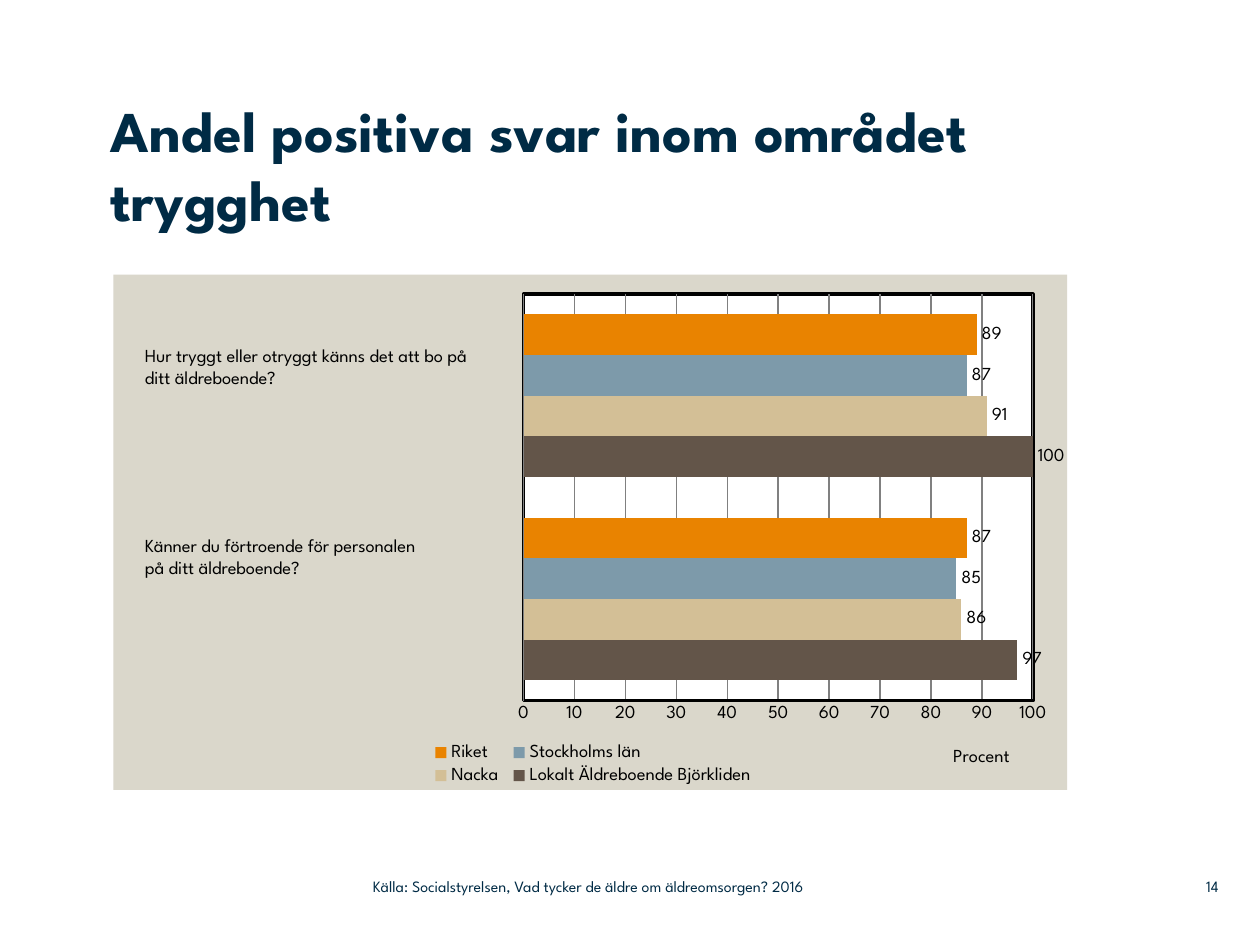
import pptx
import pptx.util
import pptx.chart.data
import pptx.dml.color
import pptx.enum.chart
import pptx.enum.text
import pptx.oxml

FONT = "League Spartan"
COLORS = {
    "navy": "002B45", "black": "000000", "white": "FFFFFF", "panel": "DAD7CB",
    "grid": "808080", "brown": "635549", "sand": "D3BF96", "blue": "7D9AAA",
    "orange": "E98300",
}
# Grid of 100 columns by 75 rows
CELL = pptx.util.Inches(0.1)
SERIES = [
    ("Lokalt Äldreboende Björkliden", (97, 100), "brown"),
    ("Nacka", (86, 91), "sand"),
    ("Stockholms län", (85, 87), "blue"),
    ("Riket", (87, 89), "orange"),
]
QUESTIONS = [
    (0.122, ["Hur tryggt eller otryggt känns det att bo på ditt äldreboende?"]),
    (0.491, ["Känner du förtroende för personalen", "på ditt äldreboende?"]),
]
CHART_NS = "http://schemas.openxmlformats.org/drawingml/2006/chart"
DRAWING_NS = "http://schemas.openxmlformats.org/drawingml/2006/main"


def emu(box):
    return [round(value * CELL) for value in box]


def inner_box(box, left, top, width, height):
    """Box given as shares of the outer box."""
    return (box[0] + left * box[2], box[1] + top * box[3],
            width * box[2], height * box[3])


def set_font(font, size, color, bold=False):
    font.name = FONT
    font.size = pptx.util.Pt(size)
    font.bold = bold
    font.color.rgb = pptx.dml.color.RGBColor.from_string(COLORS[color])


def fill_text(frame, lines, size, color, bold=False, align="LEFT"):
    frame.word_wrap = True
    for index, line in enumerate(lines):
        paragraph = frame.add_paragraph() if index else frame.paragraphs[0]
        paragraph.alignment = pptx.enum.text.PP_ALIGN[align]
        run = paragraph.add_run()
        run.text = line
        set_font(run.font, size, color, bold)


def clear_margins(frame):
    frame.margin_left = frame.margin_right = 0
    frame.margin_top = frame.margin_bottom = 0


def add_title(slide, box, text):
    title = slide.shapes.title
    title.left, title.top, title.width, title.height = emu(box)
    frame = title.text_frame
    clear_margins(frame)
    frame.auto_size = pptx.enum.text.MSO_AUTO_SIZE.NONE
    frame.vertical_anchor = pptx.enum.text.MSO_ANCHOR.TOP
    fill_text(frame, [text], 33, "navy", bold=True)


def place_chart_part(element, index, left, top, width=None, height=None):
    """Give a chart part a manual layout in shares of the chart."""
    for old in element.findall(f"{{{CHART_NS}}}layout"):
        element.remove(old)
    target = '<c:layoutTarget val="inner"/>' if element.tag.endswith("plotArea") else ""
    size = f'<c:w val="{width}"/><c:h val="{height}"/>' if width else ""
    element.insert(index, pptx.oxml.parse_xml(
        f'<c:layout xmlns:c="{CHART_NS}"><c:manualLayout>{target}'
        f'<c:xMode val="edge"/><c:yMode val="edge"/>'
        f'<c:x val="{left}"/><c:y val="{top}"/>{size}</c:manualLayout></c:layout>'))


def area_format(fill, line=None):
    solid = '<a:solidFill><a:srgbClr val="{}"/></a:solidFill>'
    outline = (f'<a:ln w="{pptx.util.Pt(2)}">{solid.format(COLORS[line])}</a:ln>'
               if line else "<a:ln><a:noFill/></a:ln>")
    return pptx.oxml.parse_xml(
        f'<c:spPr xmlns:c="{CHART_NS}" xmlns:a="{DRAWING_NS}">'
        f"{solid.format(COLORS[fill])}{outline}</c:spPr>")


def format_value_axis(axis):
    axis.minimum_scale, axis.maximum_scale, axis.major_unit = 0, 100, 10
    axis.major_tick_mark = axis.minor_tick_mark = pptx.enum.chart.XL_TICK_MARK.NONE
    set_font(axis.tick_labels.font, 10.5, "black")
    axis.has_major_gridlines = True
    for line, color, width in ((axis.format.line, "black", 2),
                               (axis.major_gridlines.format.line, "grid", 0.75)):
        line.color.rgb = pptx.dml.color.RGBColor.from_string(COLORS[color])
        line.width = pptx.util.Pt(width)
    fill_text(axis.axis_title.text_frame, ["Procent"], 10.5, "black")


def add_chart_panel(slide, box):
    data = pptx.chart.data.CategoryChartData()
    data.categories = ["1", "2"]
    for name, values, _ in SERIES:
        data.add_series(name, values)
    chart = slide.shapes.add_chart(
        pptx.enum.chart.XL_CHART_TYPE.BAR_CLUSTERED, *emu(box), data).chart
    set_font(chart.font, 10.5, "black")
    chart.has_title = False
    chart.category_axis.visible = False
    format_value_axis(chart.value_axis)

    # Bars and value labels
    plot = chart.plots[0]
    plot.gap_width = 100
    plot.vary_by_categories = False
    for series, (_, _, color) in zip(plot.series, SERIES):
        series.format.fill.solid()
        series.format.fill.fore_color.rgb = pptx.dml.color.RGBColor.from_string(COLORS[color])
        labels = series.data_labels
        labels.show_value = True
        labels.position = pptx.enum.chart.XL_LABEL_POSITION.OUTSIDE_END
        set_font(labels.font, 10.5, "black")

    # Legend
    chart.has_legend = True
    chart.legend.position = pptx.enum.chart.XL_LEGEND_POSITION.BOTTOM
    chart.legend.include_in_layout = False
    set_font(chart.legend.font, 10.5, "black")

    # Backgrounds and manual layout
    root = chart.element
    plot_area = root.xpath(".//c:plotArea")[0]
    plot_area.append(area_format("white", "black"))
    root.xpath("./c:chart")[0].addnext(area_format("panel"))
    place_chart_part(plot_area, 0, 0.43, 0.038, 0.534, 0.789)
    place_chart_part(root.xpath(".//c:legend")[0], 1, 0.328, 0.9, 0.35, 0.1)
    place_chart_part(root.xpath(".//c:valAx/c:title")[0], 1, 0.877, 0.91)


def add_questions(slide, box):
    for top, lines in QUESTIONS:
        label = slide.shapes.add_textbox(*emu(inner_box(box, 0.02, top, 0.388, 0.11)))
        fill_text(label.text_frame, lines, 10.5, "black")
        label.text_frame.auto_size = pptx.enum.text.MSO_AUTO_SIZE.SHAPE_TO_FIT_TEXT


def add_footer(slide, box):
    parts = [
        (0.93, 0.07, "14", "RIGHT"),
        (0, 0.66, "Källa: Socialstyrelsen, Vad tycker de äldre om äldreomsorgen? 2016", "LEFT"),
    ]
    for left, width, text, align in parts:
        frame = slide.shapes.add_textbox(
            *emu(inner_box(box, left, 0, width, 1))).text_frame
        clear_margins(frame)
        frame.vertical_anchor = pptx.enum.text.MSO_ANCHOR.MIDDLE
        fill_text(frame, [text], 9, "navy", align=align)


def main():
    presentation = pptx.Presentation()
    presentation.slide_width, presentation.slide_height = 100 * CELL, 75 * CELL
    slide = presentation.slides.add_slide(presentation.slide_layouts[5])
    panel = (9, 21.8, 75.7, 40.9)
    add_chart_panel(slide, panel)
    add_title(slide, (8.8, 7.5, 76, 14.2), "Andel positiva svar inom området trygghet")
    add_questions(slide, panel)
    add_footer(slide, (29.6, 68.9, 67.1, 2.9))
    presentation.save("out.pptx")


if __name__ == "__main__":
    main()
